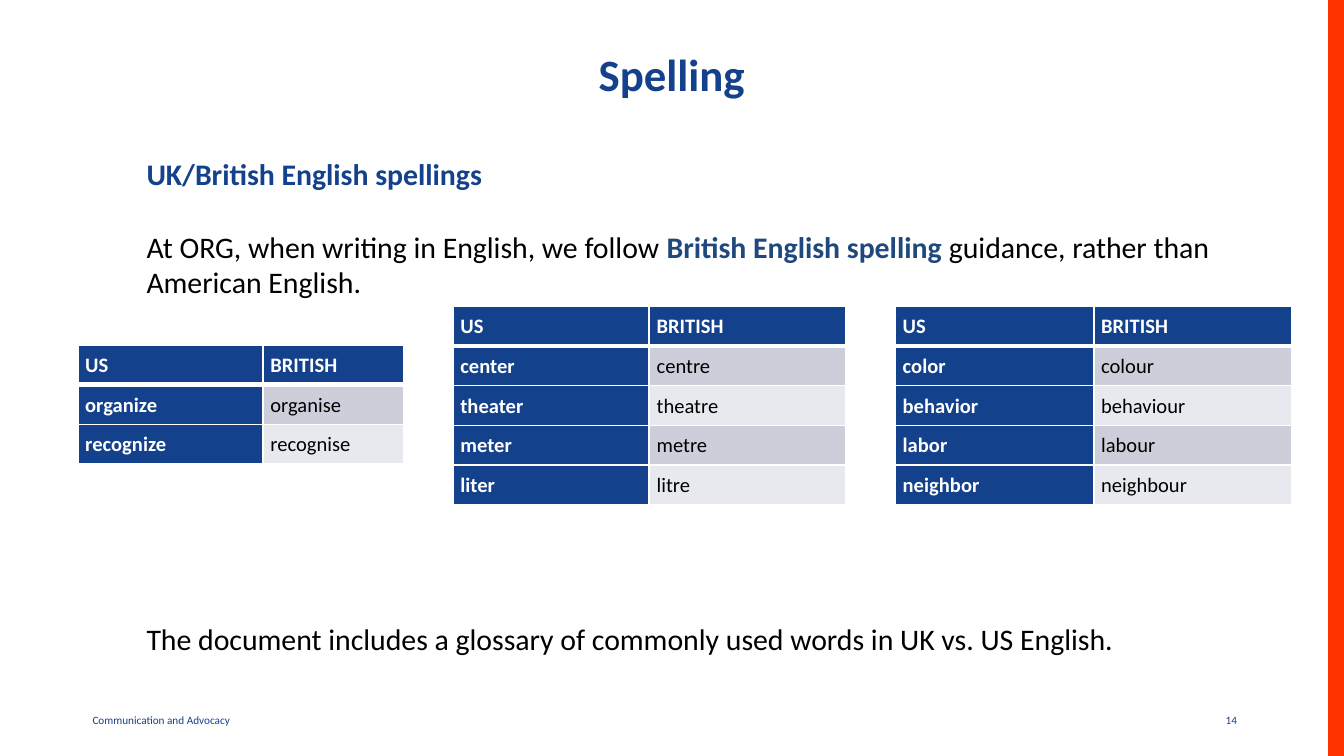
from lxml import etree
from pptx import Presentation
from pptx.dml.color import RGBColor
from pptx.enum import shapes, text
from pptx.oxml.ns import qn
from pptx.util import Cm, Pt

BLUE = RGBColor(0x14, 0x41, 0x8B)
NAVY = RGBColor(0x1F, 0x49, 0x7D)
RED = RGBColor(0xFF, 0x33, 0x00)
BLACK = RGBColor(0, 0, 0)
WHITE = RGBColor(0xFF, 0xFF, 0xFF)
BANDS = [RGBColor(0xCC, 0xCF, 0xDA), RGBColor(0xE7, 0xE9, 0xEE)]

LEFT, CENTER, RIGHT = text.PP_ALIGN.LEFT, text.PP_ALIGN.CENTER, text.PP_ALIGN.RIGHT
MIDDLE = text.MSO_ANCHOR.MIDDLE


def add_run(para, words, size, color, bold=False):
    run = para.add_run()
    run.text = words
    look = {"name": "Calibri", "size": Pt(size), "bold": bold}
    for key, value in look.items():
        setattr(run.font, key, value)
    run.font.color.rgb = color


def edge_cell(cell, foot):
    """Draw white borders round a cell; foot is the bottom width in points."""
    props = cell._tc.get_or_add_tcPr()
    widths = {"a:lnL": 1, "a:lnR": 1, "a:lnT": 1, "a:lnB": foot}
    for spot, (tag, width) in enumerate(widths.items()):
        line = etree.Element(qn(tag), w=str(Pt(width)))
        fill = etree.SubElement(line, qn("a:solidFill"))
        etree.SubElement(fill, qn("a:srgbClr"), val=str(WHITE))
        props.insert(spot, line)


prs = Presentation()
prs.slide_width, prs.slide_height = Cm(25.4), Cm(14.29)
slide = prs.slides.add_slide(prs.slide_layouts[6])

# Red bar at the right edge
bar = slide.shapes.add_shape(
    shapes.MSO_SHAPE.RECTANGLE, Cm(25.1), 0, Cm(0.3), prs.slide_height)
bar.shadow.inherit = False
bar.fill.solid()
bar.fill.fore_color.rgb = RED
bar.line.fill.background()

# Title and footer: words, box in cm, side inset in cm, alignment, size, bold
LABELS = [
    ("Spelling", (1.75, 0, 21.89, 2.77), 0.25, CENTER, 24, True),
    ("Communication and Advocacy", (1.75, 13.23, 5.72, 0.76), 0, LEFT, 6, False),
    ("14", (17.91, 13.23, 5.72, 0.76), 0.25, RIGHT, 6, False),
]
for words, box, inset, align, size, bold in LABELS:
    frame = slide.shapes.add_textbox(*map(Cm, box)).text_frame
    look = {"word_wrap": True, "vertical_anchor": MIDDLE,
            "margin_left": Cm(inset), "margin_right": Cm(inset)}
    for key, value in look.items():
        setattr(frame, key, value)
    para = frame.paragraphs[0]
    para.alignment = align
    add_run(para, words, size, BLUE, bold)

# Body: space before each paragraph in points, then its runs
BODY = [
    (0, [("UK/British English spellings", BLUE, True)]),
    (19.5, [("At ORG, when writing in English, we follow ", BLACK, False),
            ("British English spelling ", NAVY, True),
            ("guidance, rather than American English.", BLACK, False)]),
    (172, [("The document includes a glossary of commonly used words "
            "in UK vs. US English.", BLACK, False)]),
]
frame = slide.shapes.add_textbox(Cm(1.75), Cm(1.07), Cm(22.5), Cm(12.17)).text_frame
look = {"word_wrap": True, "margin_left": Cm(1.02), "margin_top": Cm(1.88)}
for key, value in look.items():
    setattr(frame, key, value)
for spot, (gap, runs) in enumerate(BODY):
    para = frame.add_paragraph() if spot else frame.paragraphs[0]
    para.space_before = Pt(gap)
    for words, color, bold in runs:
        add_run(para, words, 16, color, bold)

# Word tables: left, top and column widths in cm, then the word pairs
ROW = 0.75
HEAD = ("US", "BRITISH")
TABLES = [
    (1.47, 6.52, (3.5, 2.66),
     [("organize", "organise"), ("recognize", "recognise")]),
    (8.56, 5.79, (3.71, 3.71),
     [("center", "centre"), ("theater", "theatre"),
      ("meter", "metre"), ("liter", "litre")]),
    (16.92, 5.79, (3.75, 3.75),
     [("color", "colour"), ("behavior", "behaviour"),
      ("labor", "labour"), ("neighbor", "neighbour")]),
]
PAD = {"margin_left": Cm(0.14), "margin_right": Cm(0.14),
       "margin_top": Cm(0.13), "margin_bottom": Cm(0.13)}
for left, top, widths, pairs in TABLES:
    rows = [HEAD] + pairs
    table = slide.shapes.add_table(
        len(rows), 2, Cm(left), Cm(top), Cm(sum(widths)), Cm(ROW * len(rows))).table
    for col, width in zip(table.columns, widths):
        col.width = Cm(width)
    for r, pair in enumerate(rows):
        for c, word in enumerate(pair):
            cell = table.cell(r, c)
            for key, value in PAD.items():
                setattr(cell, key, value)
            dark = r == 0 or c == 0
            cell.fill.solid()
            cell.fill.fore_color.rgb = BLUE if dark else BANDS[(r - 1) % 2]
            edge_cell(cell, 1 if r else 3)
            para = cell.text_frame.paragraphs[0]
            para.line_spacing = 1.04
            add_run(para, word, 11, WHITE if dark else BLACK, dark)

prs.save("out.pptx")
